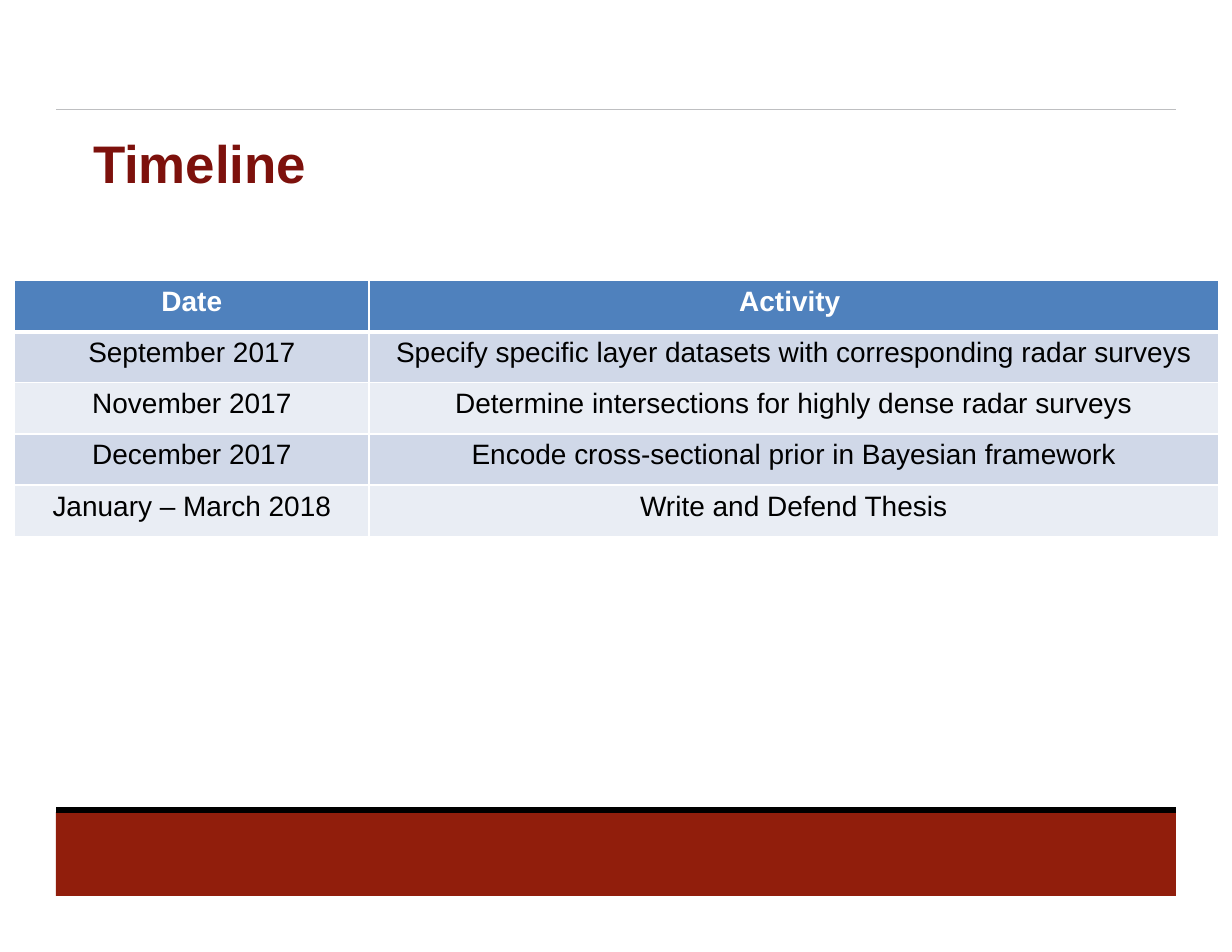
from lxml import etree
from pptx import Presentation
from pptx import util as u
from pptx.dml.color import RGBColor
from pptx.enum import shapes, text
from pptx.oxml.ns import qn

COLORS = {
    "title": "7D110C",
    "footer": "911E0C",
    "rule": "BEBFC1",
    "black": "000000",
    "white": "FFFFFF",
    "header": "4F81BD",
    "odd": "D0D8E8",
    "even": "E9EDF4",
}

MILESTONES = [
    ("Date", "Activity "),
    ("September 2017", "Specify specific layer datasets with corresponding radar surveys"),
    ("November 2017", "Determine intersections for highly dense radar surveys"),
    ("December 2017", "Encode cross-sectional prior in Bayesian framework"),
    ("January – March 2018", "Write and Defend Thesis"),
]


def rgb(name):
    return RGBColor.from_string(COLORS[name])


def apply(target, values):
    for key, value in values.items():
        setattr(target, key, value)


class Deck:
    font = "Arial"

    def __init__(self, width, height):
        self.prs = Presentation()
        apply(self.prs, {"slide_width": u.Cm(width), "slide_height": u.Cm(height)})
        self.slide = self.prs.slides.add_slide(self.prs.slide_layouts[5])

    def style(self, paragraph, size, color, bold, align):
        paragraph.alignment = align
        apply(paragraph.font, {"name": self.font, "size": u.Pt(size), "bold": bold})
        paragraph.font.color.rgb = rgb(color)

    def title(self, words, left, top, width, height):
        heading = self.slide.shapes.title
        apply(heading, {"left": u.Cm(left), "top": u.Cm(top),
                        "width": u.Cm(width), "height": u.Cm(height)})
        frame = heading.text_frame
        frame.text = words
        apply(frame, {"margin_left": 0, "margin_top": 0, "margin_right": 0,
                      "margin_bottom": 0, "word_wrap": True,
                      "vertical_anchor": text.MSO_ANCHOR.TOP,
                      "auto_size": text.MSO_AUTO_SIZE.SHAPE_TO_FIT_TEXT})
        self.style(frame.paragraphs[0], 34, "title", True, text.PP_ALIGN.LEFT)

    def band(self, left, top, width, height, color):
        footer = self.slide.shapes.add_shape(
            shapes.MSO_SHAPE.RECTANGLE, *map(u.Cm, (left, top, width, height)))
        footer.shadow.inherit = False
        footer.fill.solid()
        footer.fill.fore_color.rgb = rgb(color)
        footer.line.fill.background()

    def rule(self, left, top, width, color, weight):
        line = self.slide.shapes.add_connector(
            shapes.MSO_CONNECTOR.STRAIGHT, *map(u.Cm, (left, top, left + width, top)))
        line.line.color.rgb = rgb(color)
        line.line.width = u.Pt(weight)
        etree.SubElement(line._element.spPr, qn("a:effectLst"))

    def border(self, cell, side, weight):
        edge = etree.SubElement(cell._tc.get_or_add_tcPr(), qn(f"a:ln{side}"),
                                w=str(u.Pt(weight)))
        fill = etree.SubElement(edge, qn("a:solidFill"))
        etree.SubElement(fill, qn("a:srgbClr"), val=COLORS["white"])

    def table(self, rows, left, top, widths, row_height):
        grid = self.slide.shapes.add_table(
            len(rows), len(widths), u.Cm(left), u.Cm(top),
            u.Cm(sum(widths)), u.Cm(row_height * len(rows))).table
        for column, width in zip(grid.columns, widths):
            column.width = u.Cm(width)
        for r, entries in enumerate(rows):
            grid.rows[r].height = u.Cm(row_height)
            header = r == 0
            fill = "header" if header else "odd" if r % 2 else "even"
            for c, words in enumerate(entries):
                cell = grid.cell(r, c)
                cell.text = words
                self.style(cell.text_frame.paragraphs[0], 18,
                           "white" if header else "black", header,
                           text.PP_ALIGN.CENTER)
                for side in "LRTB":
                    heavy = (r, side) in ((0, "B"), (1, "T"))
                    self.border(cell, side, 3 if heavy else 1)
                cell.fill.solid()
                cell.fill.fore_color.rgb = rgb(fill)


def main():
    deck = Deck(27.94, 21.59)
    margin, width = 1.27, 25.4
    deck.band(margin, 18.42, width, 1.9, "footer")
    deck.rule(margin, 2.49, width, "rule", 0.75)
    deck.rule(margin, 18.37, width, "black", 3.75)
    deck.title("Timeline", 2.11, 2.97, 23.7, 1.45)
    deck.table(MILESTONES, 0.33, 6.36, (8.04, 19.26), 1.16)
    deck.prs.save("out.pptx")


if __name__ == "__main__":
    main()
